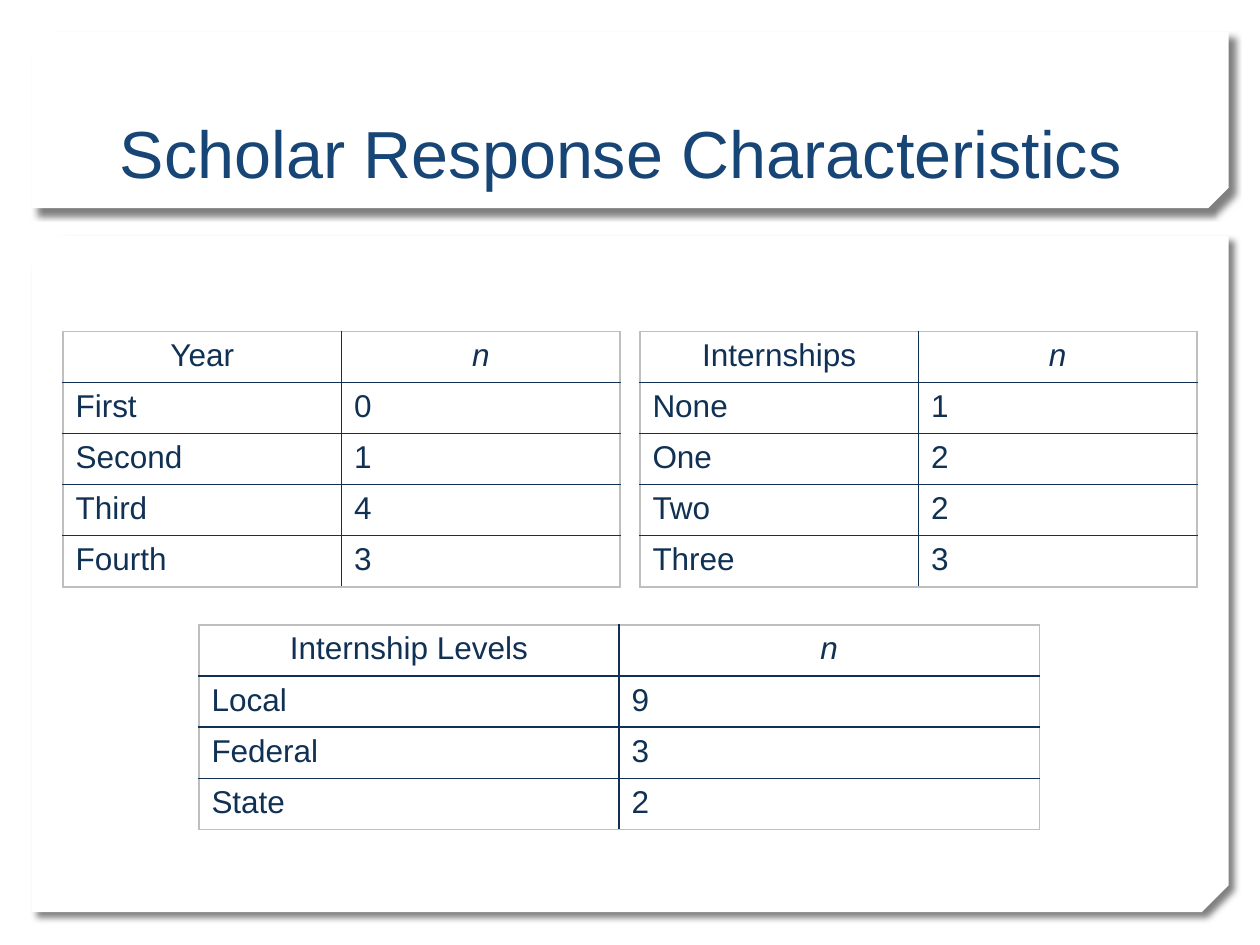
import pptx
import pptx.util
import pptx.oxml
import pptx.oxml.ns
import pptx.dml.color
import pptx.enum.shapes
import pptx.enum.text

Cm = pptx.util.Cm
Pt = pptx.util.Pt
qn = pptx.oxml.ns.qn
NS = pptx.oxml.ns.nsdecls("a")
FONT = "Arial"
COLORS = {"panel": "FFFFFF", "title": "174576", "text": "103154",
          "edge": "BFBFBF", "shadow": "000000"}
ROW_H = 1.03


def rgb(name):
    return pptx.dml.color.RGBColor.from_string(COLORS[name])


def add_panel(slide, left, top, width, height, snip):
    sp = slide.shapes.add_shape(pptx.enum.shapes.MSO_SHAPE.SNIP_2_DIAG_RECTANGLE,
                                Cm(left), Cm(top), Cm(width), Cm(height))
    sp.adjustments[0] = 0
    sp.adjustments[1] = snip
    sp.fill.solid()
    sp.fill.fore_color.rgb = rgb("panel")
    sp.line.fill.background()
    sp_pr = sp._element.spPr
    sp_pr.find(qn("a:xfrm")).set("flipV", "1")
    sp_pr.append(pptx.oxml.parse_xml(
        f'<a:effectLst {NS}><a:outerShdw blurRad="{Pt(4)}" dist="{Pt(5)}" '
        f'dir="2700000" algn="tl" rotWithShape="0"><a:srgbClr val="{COLORS["shadow"]}">'
        '<a:alpha val="50000"/></a:srgbClr></a:outerShdw></a:effectLst>'))


def place_title(slide, text, left, top, width, height):
    title = slide.shapes.title
    title.left, title.top, title.width, title.height = map(Cm, (left, top, width, height))
    slide.shapes._spTree.append(title._element)
    tf = title.text_frame
    tf.text = text
    tf.word_wrap = True
    tf.vertical_anchor = pptx.enum.text.MSO_ANCHOR.BOTTOM
    p = tf.paragraphs[0]
    p.alignment = pptx.enum.text.PP_ALIGN.LEFT
    p.font.name, p.font.size = FONT, Pt(38)
    p.font.color.rgb = rgb("title")


def set_borders(cell, outer):
    tc_pr = cell._tc.get_or_add_tcPr()
    for side in "LRTB":
        color = COLORS["edge" if side in outer else "text"]
        tc_pr.append(pptx.oxml.parse_xml(
            f'<a:ln{side} {NS} w="{Pt(1)}"><a:solidFill><a:srgbClr val="{color}"/>'
            f'</a:solidFill></a:ln{side}>'))


def add_count_table(slide, left, top, width, heading, counts):
    rows = [(heading, "n"), *counts]
    table = slide.shapes.add_table(len(rows), 2, Cm(left), Cm(top), Cm(width),
                                   Cm(ROW_H * len(rows))).table
    table.first_row = table.horz_banding = False
    for i, row in enumerate(rows):
        for j, value in enumerate(row):
            cell = table.cell(i, j)
            outer = "LR"[j]
            if i == 0:
                outer += "T"
            if i == len(rows) - 1:
                outer += "B"
            set_borders(cell, outer)
            cell.fill.background()
            cell.text = str(value)
            p = cell.text_frame.paragraphs[0]
            if i == 0:
                p.alignment = pptx.enum.text.PP_ALIGN.CENTER
            p.font.name, p.font.size = FONT, Pt(18)
            p.font.italic = i == 0 and j == 1
            p.font.color.rgb = rgb("text")


def main():
    prs = pptx.Presentation()
    prs.slide_width, prs.slide_height = Cm(25.4), Cm(19.05)
    slide = prs.slides.add_slide(prs.slide_layouts[5])
    add_panel(slide, 0.64, 4.75, 24.13, 13.64, 0.04)
    add_panel(slide, 0.64, 0.64, 24.13, 3.56, 0.117)
    place_title(slide, "Scholar Response Characteristics", 2.16, 0.81, 21.06, 3.18)
    add_count_table(slide, 1.27, 6.68, 11.23, "Year",
                    [("First", 0), ("Second", 1), ("Third", 4), ("Fourth", 3)])
    add_count_table(slide, 12.9, 6.68, 11.23, "Internships",
                    [("None", 1), ("One", 2), ("Two", 2), ("Three", 3)])
    add_count_table(slide, 4.01, 12.6, 16.94, "Internship Levels",
                    [("Local", 9), ("Federal", 3), ("State", 2)])
    prs.save("out.pptx")


if __name__ == "__main__":
    main()
